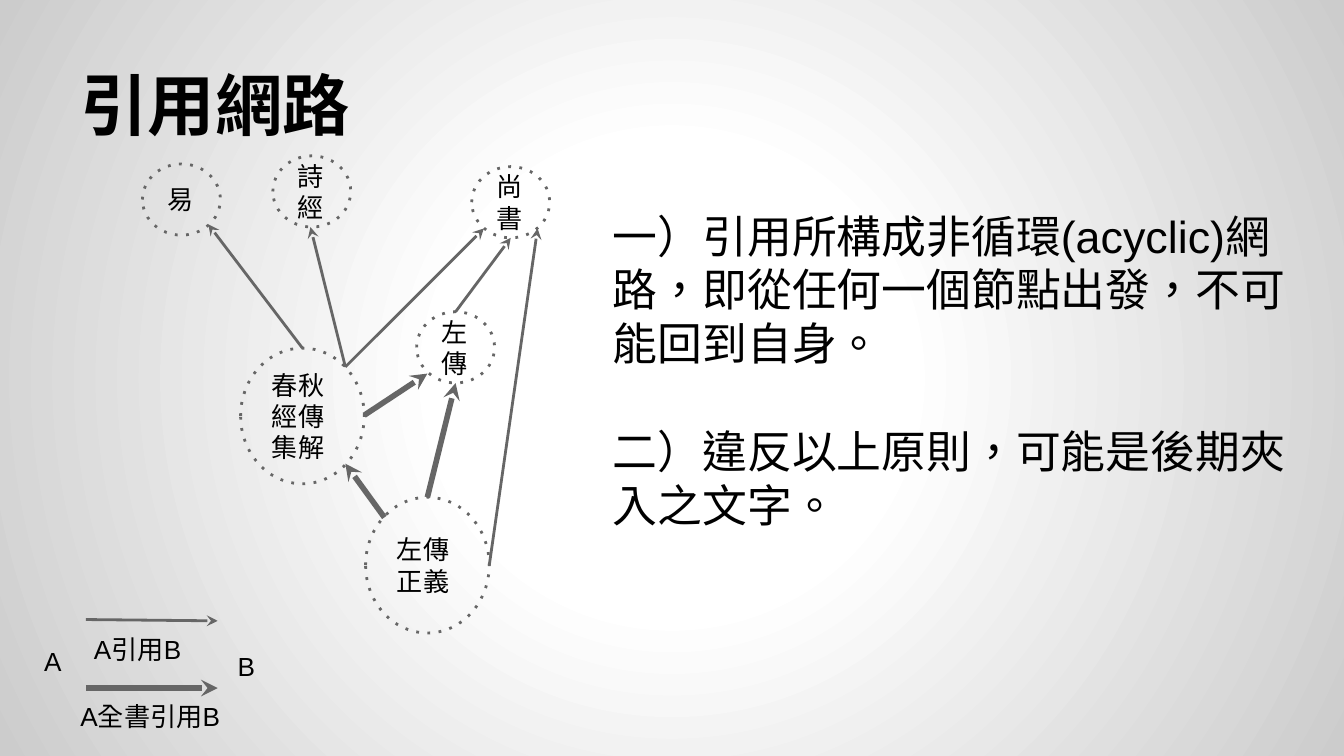
from lxml import etree
from pptx import Presentation
from pptx.dml.color import RGBColor
from pptx.enum.shapes import MSO_CONNECTOR, MSO_SHAPE
from pptx.enum.text import MSO_ANCHOR, MSO_AUTO_SIZE, PP_ALIGN
from pptx.oxml import parse_xml
from pptx.oxml.ns import nsdecls, qn
from pptx.util import Inches, Pt

STRAIGHT = MSO_CONNECTOR.STRAIGHT
ELLIPSE = MSO_SHAPE.OVAL
TOP, MIDDLE, BOTTOM = MSO_ANCHOR.TOP, MSO_ANCHOR.MIDDLE, MSO_ANCHOR.BOTTOM
FIXED = MSO_AUTO_SIZE.NONE
LEFT = PP_ALIGN.LEFT

COLORS = {"text": "000000", "line": "666666", "center": "FFFFFF", "edge": "CCCCCC"}

deck = Presentation()
deck.slide_width = Inches(10)
deck.slide_height = deck.slide_width * 9 // 16
COLUMN = deck.slide_width / 100
ROW = deck.slide_height / 56.25
page = deck.slides.add_slide(deck.slide_layouts[1])


def grid(*cells):
    return [round(cell * (ROW if index % 2 else COLUMN)) for index, cell in enumerate(cells)]


def write(box, paragraphs, anchor=TOP, size=14, name="Arial", bold=False, gap=0):
    frame = box.text_frame
    frame_format = {
        "word_wrap": True, "auto_size": FIXED, "vertical_anchor": anchor,
        "margin_left": Inches(0.1), "margin_right": Inches(0.1),
        "margin_top": Inches(0.1), "margin_bottom": Inches(0.1),
    }
    for key, value in frame_format.items():
        setattr(frame, key, value)
    for index, text in enumerate(paragraphs):
        para = frame.add_paragraph() if index else frame.paragraphs[0]
        para.text = text
        para.alignment = LEFT
        para.space_before = Pt(gap if index else 0)
        for span in para.runs:
            for key, value in {"size": Pt(size), "name": name, "bold": bold}.items():
                setattr(span.font, key, value)
            span.font.color.rgb = RGBColor.from_string(COLORS["text"])
            span._r.get_or_add_rPr().set("lang", "zh-TW")


stops = "".join(
    f'<a:gs pos="{share * 1000}"><a:srgbClr val="{COLORS[key]}"/></a:gs>'
    for share, key in ((0, "center"), (30, "center"), (100, "edge"))
)
background = parse_xml(
    f'<p:bg {nsdecls("p", "a")}><p:bgPr><a:gradFill><a:gsLst>{stops}</a:gsLst>'
    '<a:path path="circle"><a:fillToRect l="50000" t="50000" r="50000" b="50000"/></a:path>'
    "</a:gradFill><a:effectLst/></p:bgPr></p:bg>"
)
page.shapes._spTree.getparent().insert(0, background)

title, body = page.shapes.title, page.placeholders[1]
for box, cells in ((title, (5, 2.3, 90, 9.4)), (body, (44.6, 14.5, 53.4, 36.5))):
    box.left, box.top, box.width, box.height = grid(*cells)
write(title, ["引用網路"], anchor=BOTTOM, size=36, name="Roboto", bold=True)
write(body, [
    "一）引用所構成非循環(acyclic)網路，即從任何一個節點出發，不可能回到自身。",
    "二）違反以上原則，可能是後期夾入之文字。",
], size=24, gap=29)
for para in body.text_frame.paragraphs:
    properties = para._p.get_or_add_pPr()
    properties.set("marL", "0")
    properties.set("indent", "0")
    etree.SubElement(properties, qn("a:buNone"))

SMALL, LARGE = (5.8, 5.3), (9.2, 10.1)
books = [
    ("易", 10.6, 12.2, SMALL),
    ("詩經", 20.3, 11.6, SMALL),
    ("尚書", 35.1, 12.4, SMALL),
    ("左傳", 31, 23.2, SMALL),
    ("春秋經傳集解", 17.9, 25.9, LARGE),
    ("左傳\v正義", 27.2, 37, LARGE),
]
for text, left, top, size in books:
    node = page.shapes.add_shape(ELLIPSE, *grid(left, top, *size))
    node.shadow.inherit = False
    node.fill.background()
    node.line.color.rgb = RGBColor.from_string(COLORS["line"])
    node.line.width = Pt(1.5)
    etree.SubElement(node.line._get_or_add_ln(), qn("a:prstDash"), val="dot")
    write(node, [text], anchor=MIDDLE)

THIN, THICK = 1.5, 3
citations = [
    (33.9, 23.2, 38, 17.7, THIN),
    (22.5, 25.9, 15.5, 16.7, THIN),
    (25.7, 27.3, 23.1, 16.9, THIN),
    (25.7, 27.3, 36, 17, THIN),
    (36.4, 42.1, 40, 17, THIN),
    (31.8, 37, 33.9, 28.5, THICK),
    (27.1, 30.9, 31.8, 27.8, THICK),
    (28.6, 38.5, 25.7, 34.5, THICK),
    (6.4, 46.1, 16.2, 46.2, THIN),
    (6.4, 51.2, 16.2, 51.2, THICK),
]
for *ends, width in citations:
    arrow = page.shapes.add_connector(STRAIGHT, *grid(*ends))
    arrow.line.color.rgb = RGBColor.from_string(COLORS["line"])
    arrow.line.width = Pt(width)
    etree.SubElement(arrow.line._get_or_add_ln(), qn("a:tailEnd"), type="stealth")
    etree.SubElement(arrow._element.spPr, qn("a:effectLst"))

legend = [
    ("A", 2.3, 47, 2.7, 3.4),
    ("B", 16.7, 47.4, 2.7, 3.4),
    ("A引用B", 6, 46.1, 9.8, 2.2),
    ("A全書引用B", 5, 51.1, 18.7, 2.2),
]
for text, *cells in legend:
    write(page.shapes.add_textbox(*grid(*cells)), [text])

deck.save("out.pptx")
